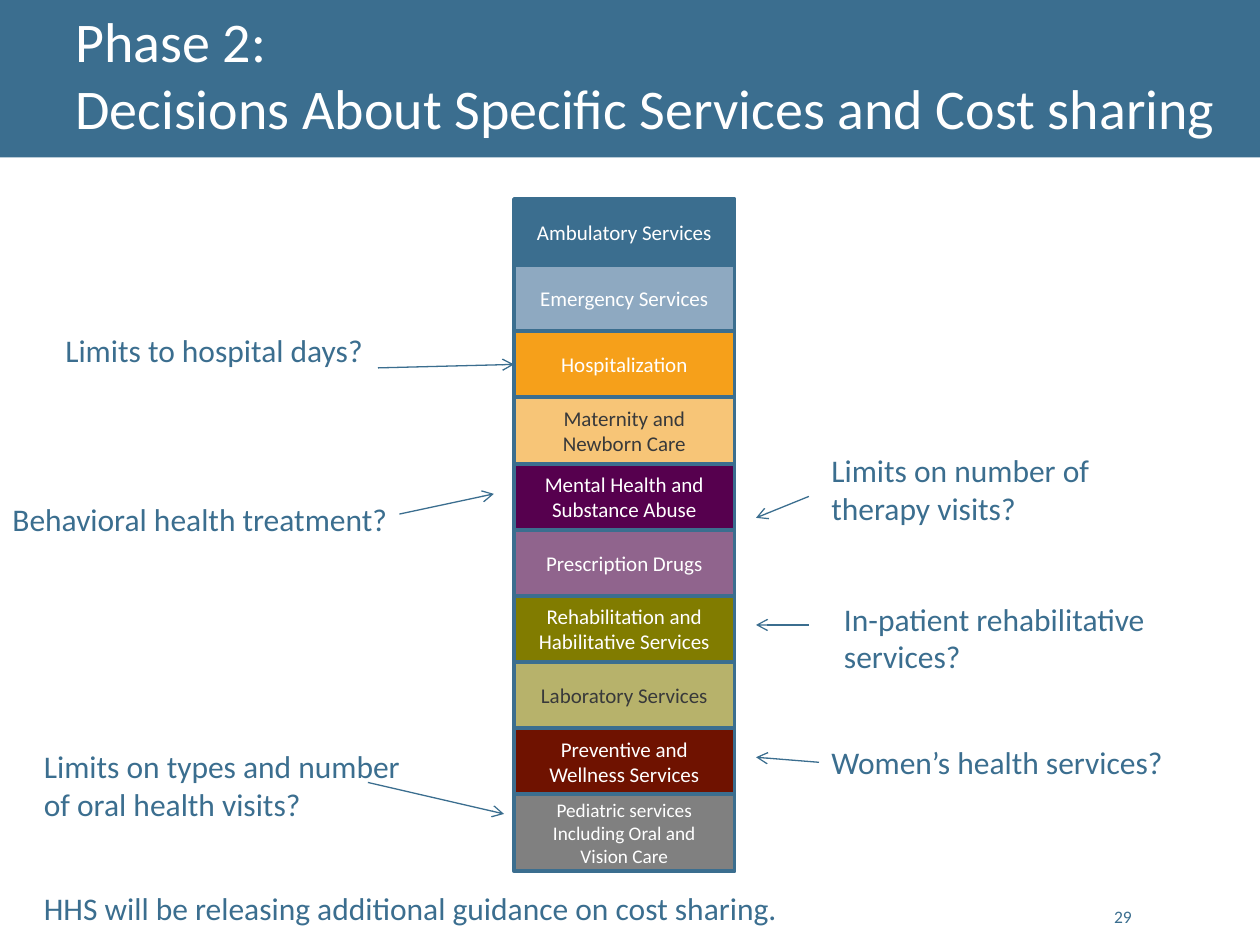
"""Build the slide on specific benefit decisions and cost sharing."""
import dataclasses

import lxml.etree
import pptx
import pptx.dml.color
import pptx.enum.shapes
import pptx.enum.text
import pptx.oxml.ns
import pptx.util

Inches = pptx.util.Inches
ALIGN = pptx.enum.text.PP_ALIGN
ANCHOR = pptx.enum.text.MSO_ANCHOR


@dataclasses.dataclass(frozen=True)
class Theme:
    """Colours, font and type sizes of the slide."""
    font: str = "Calibri"
    blue: str = "3B6E8F"
    white: str = "FFFFFF"
    dark: str = "38393A"
    title: int = 32
    note: int = 18
    service: int = 12
    small: int = 11
    number: int = 10
    border: float = 2.25
    arrow: float = 0.75


THEME = Theme()

TITLE = ["Phase 2:", "Decisions About Specific Services and Cost sharing"]

SERVICES = [
    (["Ambulatory Services"], THEME.blue, THEME.white),
    (["Emergency Services"], "8EA9C1", THEME.white),
    (["Hospitalization"], "F6A01A", THEME.white),
    (["Maternity and Newborn Care"], "F7C577", THEME.dark),
    (["Mental Health and Substance Abuse"], "56004E", THEME.white),
    (["Prescription Drugs"], "90648D", THEME.white),
    (["Rehabilitation and Habilitative Services"], "817C00", THEME.white),
    (["Laboratory Services"], "B7B26B", THEME.dark),
    (["Preventive and Wellness Services"], "6F1200", THEME.white),
    (["Pediatric services Including Oral and", "Vision Care"], "808080", THEME.white),
]

NOTES = [
    ("Limits to hospital days?", (0.42, 2.58, 2.59, 0.4), False),
    ("Behavioral health treatment?", (0, 3.92, 3.29, 0.4), False),
    ("Limits on types and number of oral health visits?", (0.25, 5.88, 3.17, 0.71), True),
    ("Limits on number of therapy visits?", (6.5, 3.53, 3.08, 0.71), True),
    ("In-patient rehabilitative services?", (6.6, 4.71, 2.9, 0.71), True),
    ("Women’s health services?", (6.5, 5.85, 2.86, 0.4), False),
    ("HHS will be releasing additional guidance on cost sharing.", (0.25, 7.01, 7.83, 0.4), True),
]

ARROWS = [
    ((3, 2.92), (4.08, 2.9), "Hospitalization"),
    ((3.17, 4.08), (3.92, 3.92), None),
    ((2.92, 6.21), (4, 6.46), None),
    ((6.42, 3.94), (6, 4.11), None),
    ((6.42, 4.96), (6, 4.96), None),
    ((6.5, 6.05), (6, 6.01), None),
]

STACK_LEFT, STACK_TOP, STACK_WIDTH = 4.08, 1.58, 1.75
ROW_STEP, LAST_HEIGHT = 0.525, 0.61


def rgb(value):
    return pptx.dml.color.RGBColor.from_string(value)


def write(box, lines, size, color, align=ALIGN.LEFT, anchor=ANCHOR.TOP, wrap=True):
    frame = box.text_frame
    frame.word_wrap = wrap
    frame.vertical_anchor = anchor
    para = frame.paragraphs[0]
    para.alignment = align
    for index, line in enumerate(lines):
        if index:
            para.add_line_break()
        span = para.add_run()
        span.text = line
        span.font.name = THEME.font
        span.font.size = pptx.util.Pt(size)
        span.font.color.rgb = rgb(color)


def add_text(page, place, lines, size, color, **options):
    box = page.shapes.add_textbox(*map(Inches, place))
    write(box, lines, size, color, **options)


def add_block(shapes, place, fill):
    kind = pptx.enum.shapes.MSO_SHAPE.RECTANGLE
    box = shapes.add_shape(kind, *map(Inches, place))
    box.shadow.inherit = False
    box.fill.solid()
    box.fill.fore_color.rgb = rgb(fill)
    box.line.fill.background()
    return box


def add_stack(page):
    group = page.shapes.add_group_shape()
    boxes = {}
    for row, (lines, fill, color) in enumerate(SERVICES):
        last = row == len(SERVICES) - 1
        height = LAST_HEIGHT if last else ROW_STEP
        place = (STACK_LEFT, STACK_TOP + row * ROW_STEP, STACK_WIDTH, height)
        box = add_block(group.shapes, place, fill)
        box.line.color.rgb = rgb(THEME.blue)
        box.line.width = pptx.util.Pt(THEME.border)
        size = THEME.small if last else THEME.service
        write(box, lines, size, color, align=ALIGN.CENTER, anchor=ANCHOR.MIDDLE)
        boxes[lines[0]] = box
    return boxes


def add_arrow(page, start, end, target):
    kind = pptx.enum.shapes.MSO_CONNECTOR.STRAIGHT
    arrow = page.shapes.add_connector(kind, *map(Inches, start + end))
    if target is not None:
        arrow.end_connect(target, 1)
    arrow.line.color.rgb = rgb(THEME.blue)
    arrow.line.width = pptx.util.Pt(THEME.arrow)
    qn = pptx.oxml.ns.qn
    line = arrow.line._get_or_add_ln()
    lxml.etree.SubElement(line, qn("a:tailEnd"), type="arrow")
    lxml.etree.SubElement(arrow._element.spPr, qn("a:effectLst"))


def main():
    deck = pptx.Presentation()
    deck.slide_width, deck.slide_height = Inches(10), Inches(7.5)
    page = deck.slides.add_slide(deck.slide_layouts[6])
    add_block(page.shapes, (0, 0, 10, 1.25), THEME.blue)
    add_text(page, (0.5, 0, 9.33, 1.18), TITLE, THEME.title, THEME.white)
    boxes = add_stack(page)
    for words, place, wrap in NOTES:
        add_text(page, place, [words], THEME.note, THEME.blue, wrap=wrap)
    for start, end, service in ARROWS:
        add_arrow(page, start, end, boxes.get(service))
    add_text(page, (8.68, 7.01, 0.4, 0.4), ["29"], THEME.number, THEME.blue,
             align=ALIGN.RIGHT, anchor=ANCHOR.BOTTOM)
    deck.save("out.pptx")


if __name__ == "__main__":
    main()
